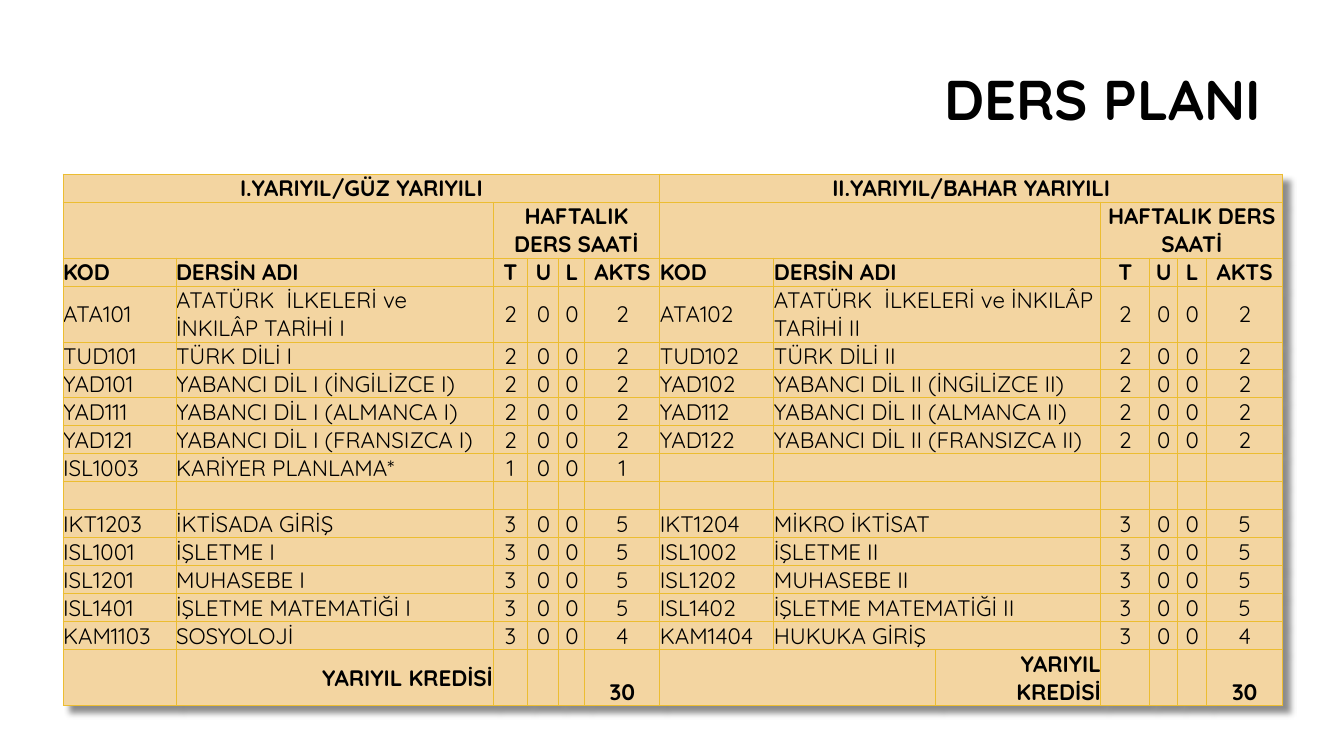
import dataclasses
import typing

import lxml.etree
import pptx
import pptx.dml.color
import pptx.enum.text
import pptx.oxml.ns
import pptx.table
import pptx.util

ALIGN = pptx.enum.text.PP_ALIGN
ANCHOR = pptx.enum.text.MSO_ANCHOR
EMU_PER_PX = 914400 / 100.8


@dataclasses.dataclass(frozen=True)
class Theme:
    font: str = "Quicksand"
    ink: str = "000000"
    cell: str = "F3D5A1"
    border: str = "ECBD31"
    title_size: int = 40
    table_size: int = 16
    border_width: float = 0.75


class Course(typing.NamedTuple):
    code: str
    name: str
    theory: int
    credits: int


@dataclasses.dataclass(frozen=True)
class Semester:
    heading: str
    columns: tuple[int, ...]  # code, name, T, U, L, AKTS
    total_column: int
    courses: tuple[Course | None, ...]


THEME = Theme()
COLUMN_WIDTHS = (113, 317, 35, 31, 26, 75, 114, 162, 165, 49, 28, 29, 76)
LINE_HEIGHT = 28
TWO_LINE_ROWS = (1, 3, 15)
ROW_COUNT = 16
HEADING_ROW, HOURS_ROW, LABEL_ROW, FIRST_COURSE_ROW = range(4)
TOTAL_ROW = ROW_COUNT - 1
LABELS = ("KOD", "DERSİN ADI", "T", "U", "L", "AKTS")

SEMESTERS = (
    Semester("I.YARIYIL/GÜZ YARIYILI", (0, 1, 2, 3, 4, 5), 1, (
        Course("ATA101", "ATATÜRK  İLKELERİ ve İNKILÂP TARİHİ I", 2, 2),
        Course("TUD101", "TÜRK DİLİ I", 2, 2),
        Course("YAD101", "YABANCI DİL I (İNGİLİZCE I)", 2, 2),
        Course("YAD111", "YABANCI DİL I (ALMANCA I)", 2, 2),
        Course("YAD121", "YABANCI DİL I (FRANSIZCA I)", 2, 2),
        Course("ISL1003", "KARİYER PLANLAMA*", 1, 1),
        None,
        Course("IKT1203", "İKTİSADA GİRİŞ", 3, 5),
        Course("ISL1001", "İŞLETME I", 3, 5),
        Course("ISL1201", "MUHASEBE I", 3, 5),
        Course("ISL1401", "İŞLETME MATEMATİĞİ I", 3, 5),
        Course("KAM1103", "SOSYOLOJİ", 3, 4),
    )),
    Semester("II.YARIYIL/BAHAR YARIYILI", (6, 7, 9, 10, 11, 12), 8, (
        Course("ATA102", "ATATÜRK  İLKELERİ ve İNKILÂP TARİHİ II", 2, 2),
        Course("TUD102", "TÜRK DİLİ II", 2, 2),
        Course("YAD102", "YABANCI DİL II (İNGİLİZCE II)", 2, 2),
        Course("YAD112", "YABANCI DİL II (ALMANCA II)", 2, 2),
        Course("YAD122", "YABANCI DİL II (FRANSIZCA II)", 2, 2),
        None,
        None,
        Course("IKT1204", "MİKRO İKTİSAT", 3, 5),
        Course("ISL1002", "İŞLETME II", 3, 5),
        Course("ISL1202", "MUHASEBE II", 3, 5),
        Course("ISL1402", "İŞLETME MATEMATİĞİ II", 3, 5),
        Course("KAM1404", "HUKUKA GİRİŞ", 3, 4),
    )),
)


def px(length: float) -> int:
    return round(length * EMU_PER_PX)


def rgb(value: str) -> pptx.dml.color.RGBColor:
    return pptx.dml.color.RGBColor.from_string(value)


def add_node(parent, tag: str, **attributes):
    return lxml.etree.SubElement(parent, pptx.oxml.ns.qn(tag), attributes)


def add_span(para, text: str, size: int, bold: bool) -> None:
    span = para.add_run()
    span.text = text
    span.font.name = THEME.font
    span.font.size = pptx.util.Pt(size)
    span.font.bold = bold
    span.font.color.rgb = rgb(THEME.ink)


def add_title(page, text: str) -> None:
    box = page.shapes.add_textbox(px(322), px(57), px(949), px(91))
    frame = box.text_frame
    frame.word_wrap = True
    frame.vertical_anchor = ANCHOR.MIDDLE
    para = frame.paragraphs[0]
    para.alignment = ALIGN.RIGHT
    para.line_spacing = 0.9
    add_span(para, text, THEME.title_size, True)


def style_cell(cell) -> None:
    cell.margin_left = cell.margin_right = cell.margin_top = cell.margin_bottom = 0
    cell.vertical_anchor = ANCHOR.MIDDLE
    properties = cell._tc.get_or_add_tcPr()
    for side in ("a:lnL", "a:lnR", "a:lnT", "a:lnB"):
        line = add_node(properties, side, w=str(pptx.util.Pt(THEME.border_width)))
        add_node(add_node(line, "a:solidFill"), "a:srgbClr", val=THEME.border)
    cell.fill.solid()
    cell.fill.fore_color.rgb = rgb(THEME.cell)


def write_cell(cell, text: str, align=ALIGN.CENTER, bold: bool = True) -> None:
    para = cell.text_frame.paragraphs[0]
    para.alignment = align
    add_span(para, text, THEME.table_size, bold)


def write_row(table: pptx.table.Table, row: int, semester: Semester,
              values: typing.Sequence, bold: bool) -> None:
    for slot, (column, value) in enumerate(zip(semester.columns, values)):
        align = ALIGN.LEFT if slot < 2 else ALIGN.CENTER
        write_cell(table.cell(row, column), str(value), align, bold)


def merge_columns(table: pptx.table.Table, row: int, first: int, last: int) -> None:
    if last > first:
        table.cell(row, first).merge(table.cell(row, last))


def fill_semester(table: pptx.table.Table, semester: Semester) -> None:
    code, name, theory, _, _, credits = semester.columns

    # Headings
    merge_columns(table, HEADING_ROW, code, credits)
    write_cell(table.cell(HEADING_ROW, code), semester.heading)
    merge_columns(table, HOURS_ROW, code, theory - 1)
    merge_columns(table, HOURS_ROW, theory, credits)
    write_cell(table.cell(HOURS_ROW, theory), "HAFTALIK DERS SAATİ")
    write_row(table, LABEL_ROW, semester, LABELS, True)

    # Courses
    for row in range(LABEL_ROW, TOTAL_ROW):
        merge_columns(table, row, name, theory - 1)
    for row, course in enumerate(semester.courses, FIRST_COURSE_ROW):
        if course:
            values = (course.code, course.name, course.theory, 0, 0, course.credits)
            write_row(table, row, semester, values, False)

    # Total
    merge_columns(table, TOTAL_ROW, code, semester.total_column - 1)
    write_cell(table.cell(TOTAL_ROW, semester.total_column), "YARIYIL KREDİSİ", ALIGN.RIGHT)
    total = sum(course.credits for course in semester.courses[-5:] if course)
    total += sum(course.credits for course in semester.courses[:3] if course)
    total_cell = table.cell(TOTAL_ROW, credits)
    total_cell.vertical_anchor = ANCHOR.BOTTOM
    write_cell(total_cell, str(total))


def add_table_shadow(table: pptx.table.Table) -> None:
    effects = lxml.etree.Element(pptx.oxml.ns.qn("a:effectLst"))
    shadow = add_node(effects, "a:outerShdw", blurRad=str(px(6)), dist=str(px(10)),
                      dir="2700000", algn="tl", rotWithShape="0")
    add_node(add_node(shadow, "a:srgbClr", val=THEME.ink), "a:alpha", val="45000")
    table._tbl.tblPr.insert(0, effects)


def add_course_table(page) -> None:
    heights = [LINE_HEIGHT * (2 if row in TWO_LINE_ROWS else 1) for row in range(ROW_COUNT)]
    table = page.shapes.add_table(ROW_COUNT, len(COLUMN_WIDTHS), px(63), px(174),
                                  px(sum(COLUMN_WIDTHS)), px(sum(heights))).table
    table.first_row = False
    table.horz_banding = False
    for column, width in zip(table.columns, COLUMN_WIDTHS):
        column.width = px(width)
    for row, height in zip(table.rows, heights):
        row.height = px(height)
    for cell in table.iter_cells():
        style_cell(cell)
    for semester in SEMESTERS:
        fill_semester(table, semester)
    for cell in table.iter_cells():
        para = cell.text_frame.paragraphs[0]
        if not para.runs:
            add_node(para._p, "a:endParaRPr", sz=str(THEME.table_size * 100))
    add_table_shadow(table)


def main() -> None:
    deck = pptx.Presentation()
    deck.slide_width, deck.slide_height = px(1344), px(756)
    page = deck.slides.add_slide(deck.slide_layouts[6])
    add_title(page, "DERS PLANI")
    add_course_table(page)
    deck.save("out.pptx")


if __name__ == "__main__":
    main()
